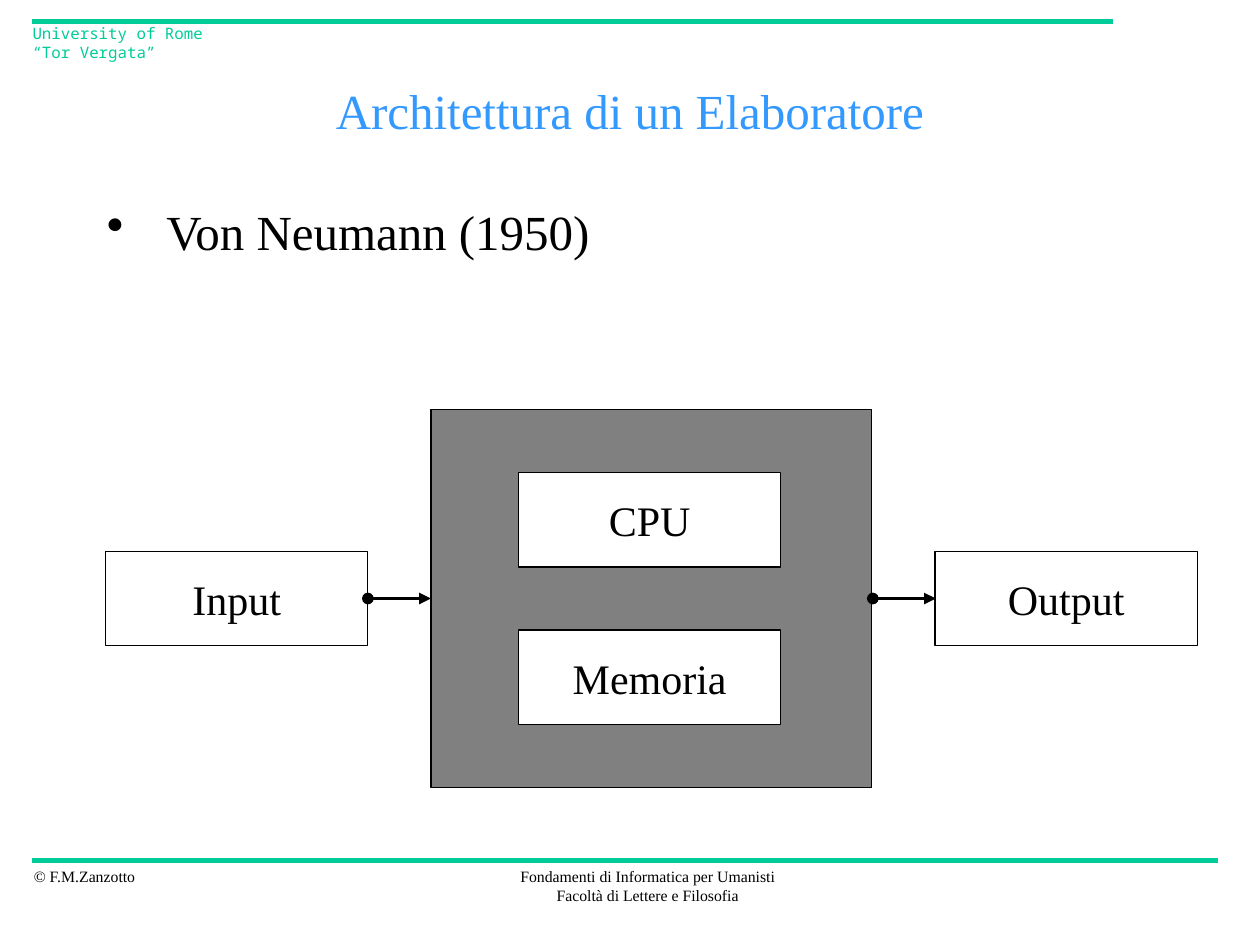
"""Build the slide on the Von Neumann computer architecture."""
from lxml import etree
from pptx import Presentation
from pptx.dml.color import RGBColor
from pptx.enum.shapes import MSO_CONNECTOR, MSO_SHAPE
from pptx.enum.text import MSO_ANCHOR, PP_ALIGN
from pptx.oxml.ns import qn
from pptx.util import Pt

LEFT, CENTER = PP_ALIGN.LEFT, PP_ALIGN.CENTER
TOP, MIDDLE = MSO_ANCHOR.TOP, MSO_ANCHOR.MIDDLE
RECT, STRAIGHT = MSO_SHAPE.RECTANGLE, MSO_CONNECTOR.STRAIGHT
SERIF, MONO = "Times New Roman", "Noto Sans Mono"
COLORS = {"green": "00CC99", "blue": "3399FF", "black": "000000",
          "gray": "808080", "white": "FFFFFF"}

TITLE = "Architettura di un Elaboratore"
BULLET = "Von Neumann (1950)"
UNIVERSITY = "University of Rome “Tor Vergata”"
AUTHOR = "© F.M.Zanzotto"
COURSE = ["Fondamenti di Informatica per Umanisti", "Facoltà di Lettere e Filosofia"]
INNER_UNITS = ["CPU", "Memoria"]
DEVICES = ["Input", "Output"]

RULES = [(18, 12.24, 635.76), (18, 491.76, 696.24)]
MACHINE = (246.24, 234, 252, 216)
BOX_W, BOX_H = 150, 54
GAP = 36


def rgb(name):
    return RGBColor.from_string(COLORS[name])


def write(sp, lines, size=24, color="black", font=SERIF, align=CENTER,
          anchor=MIDDLE, wrap=True, bullet_indent=0):
    tf = sp.text_frame
    tf.word_wrap = wrap
    tf.vertical_anchor = anchor
    for i, line in enumerate(lines):
        p = tf.paragraphs[0] if i == 0 else tf.add_paragraph()
        p.alignment = align
        if bullet_indent:
            pPr = p._p.get_or_add_pPr()
            pPr.set("marL", str(Pt(bullet_indent)))
            pPr.set("indent", str(-Pt(bullet_indent)))
            etree.SubElement(pPr, qn("a:buChar")).set("char", "•")
        r = p.add_run()
        r.text = line
        r.font.size = Pt(size)
        r.font.name = font
        r.font.color.rgb = rgb(color)


def add_text(s, box, lines, **fmt):
    sp = s.shapes.add_textbox(*map(Pt, box))
    write(sp, lines, **fmt)
    return sp


def add_box(s, x, y, w, h, fill, label=None):
    sp = s.shapes.add_shape(RECT, Pt(x), Pt(y), Pt(w), Pt(h))
    sp.shadow.inherit = False
    sp.fill.solid()
    sp.fill.fore_color.rgb = rgb(fill)
    sp.line.color.rgb = rgb("black")
    sp.line.width = Pt(0.75)
    if label:
        write(sp, [label], wrap=False)


def add_line(s, x1, x2, y, color, width, arrow=False):
    c = s.shapes.add_connector(STRAIGHT, Pt(x1), Pt(y), Pt(x2), Pt(y))
    c.line.color.rgb = rgb(color)
    c.line.width = Pt(width)
    if arrow:
        ln = c.line._get_or_add_ln()
        for tag, kind in (("a:headEnd", "oval"), ("a:tailEnd", "triangle")):
            etree.SubElement(ln, qn(tag)).set("type", kind)
    etree.SubElement(c._element.spPr, qn("a:effectLst"))


def main():
    prs = Presentation()
    prs.slide_width, prs.slide_height = Pt(720), Pt(540)
    s = prs.slides.add_slide(prs.slide_layouts[5])

    for x1, y, x2 in RULES:
        add_line(s, x1, x2, y, "green", 3)
    add_text(s, (12.24, 491.76, 73.44, 18), [AUTHOR], size=9, align=LEFT,
             anchor=TOP, wrap=False)
    add_text(s, (289.44, 491.76, 161.28, 28.8), COURSE, size=9,
             anchor=TOP, wrap=False)
    add_text(s, (11.52, 10.08, 123.12, 18), [UNIVERSITY], size=9,
             color="green", font=MONO, align=LEFT, anchor=TOP)

    title = s.shapes.title
    title.left, title.top, title.width, title.height = map(Pt, (54, 36, 612, 54))
    write(title, [TITLE], size=28, color="blue")
    body = add_text(s, (54, 108, 612, 372), [BULLET], size=28, align=LEFT,
                    anchor=TOP, bullet_indent=34)
    body.text_frame.margin_top = Pt(7)

    x, y, w, h = MACHINE
    middle = y + h / 2
    add_box(s, x, y, w, h, "gray")
    for i, label in enumerate(INNER_UNITS):
        add_box(s, x + (w - BOX_W) / 2 - 1, y + GAP + i * (BOX_H + GAP),
                BOX_W, BOX_H, "white", label)
    for label, left in zip(DEVICES, (x - GAP - BOX_W, x + w + GAP)):
        add_box(s, left, middle - BOX_H / 2, BOX_W, BOX_H, "white", label)
    for start in (x - GAP, x + w + 0.5):
        add_line(s, start, start + GAP, middle, "black", 2.25, arrow=True)

    prs.save("out.pptx")


if __name__ == "__main__":
    main()
